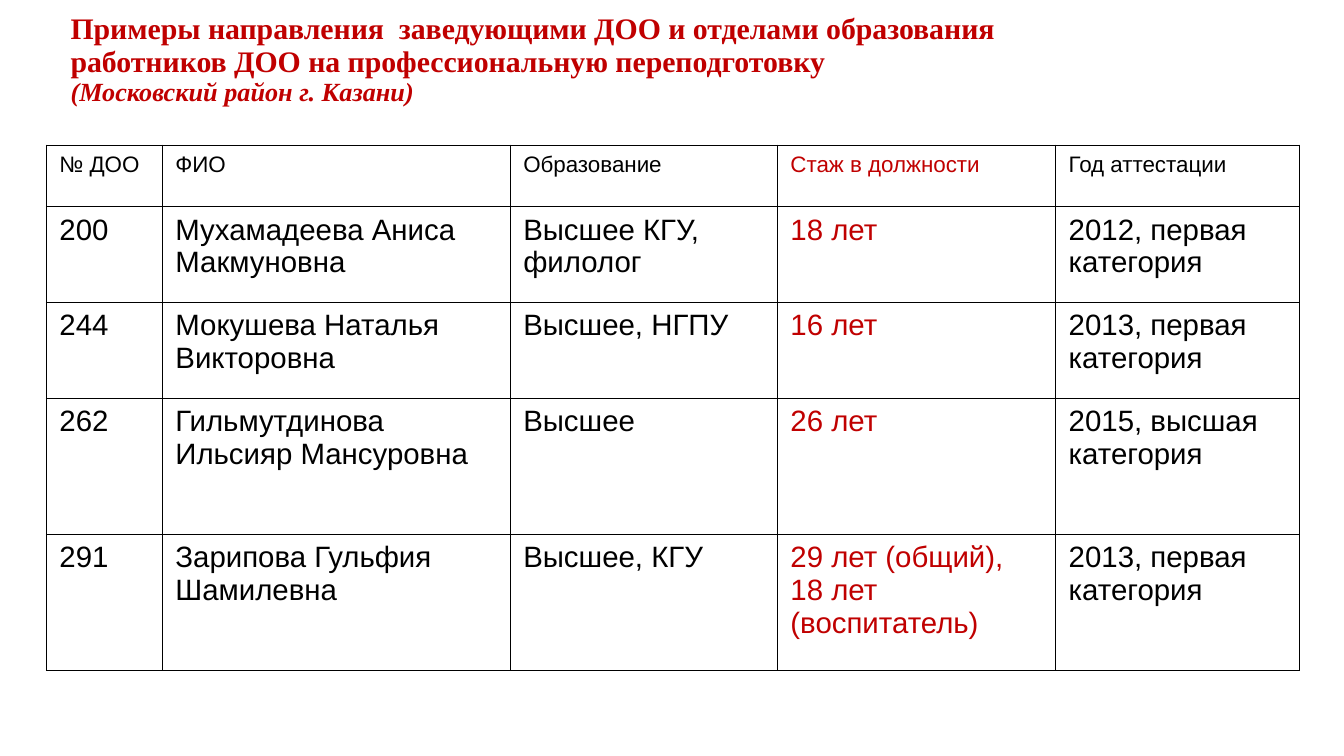
from lxml.etree import SubElement
from pptx import Presentation
from pptx.dml.color import RGBColor
from pptx.enum.text import MSO_ANCHOR, MSO_AUTO_SIZE, PP_ALIGN
from pptx.oxml.ns import qn
from pptx.util import Inches, Pt

RED = RGBColor(0xC0, 0x00, 0x00)
BLACK = RGBColor(0x00, 0x00, 0x00)

TITLE_BOX = (0.6, 0.37, 12.89, 0.46)
TABLE_BOX = (0.46, 1.44, 12.42, 5.22)
COLUMN_WIDTHS = (1.15, 3.45, 2.65, 2.76, 2.42)
ROW_HEIGHTS = (0.61, 0.95, 0.95, 1.35, 1.35)
EXPERIENCE_COLUMN = 3

TITLE_LINES = (
    ("Примеры направления  заведующими ДОО и отделами образования", 21.3, False),
    ("работников ДОО на профессиональную переподготовку", 21.3, False),
    ("(Московский район г. Казани)", 18.7, True),
)
STAFF = (
    ("№ ДОО", "ФИО", "Образование", "Стаж в должности", "Год аттестации"),
    ("200", "Мухамадеева Аниса Макмуновна", "Высшее КГУ, филолог",
     "18 лет", "2012, первая категория"),
    ("244", "Мокушева Наталья Викторовна", "Высшее, НГПУ",
     "16 лет", "2013, первая категория"),
    ("262", "Гильмутдинова Ильсияр Мансуровна", "Высшее",
     "26 лет", "2015, высшая категория"),
    ("291", "Зарипова Гульфия Шамилевна", "Высшее, КГУ",
     "29 лет (общий), 18 лет (воспитатель)", "2013, первая категория"),
)


def set_values(target, values):
    for name, value in values.items():
        setattr(target, name, value)


def add_span(para, text, color, **font_values):
    span = para.add_run()
    span.text = text
    set_values(span.font, font_values)
    span.font.color.rgb = color


def add_title(page, box):
    title = page.shapes.title
    left, top, width, height = map(Inches, box)
    set_values(title, dict(left=left, top=top, width=width, height=height))
    frame = title.text_frame
    set_values(frame, dict(
        word_wrap=True, auto_size=MSO_AUTO_SIZE.NONE,
        vertical_anchor=MSO_ANCHOR.MIDDLE,
        margin_left=Inches(0.1), margin_right=Inches(0.1),
        margin_top=Inches(0.05), margin_bottom=Inches(0.05)))
    para = frame.paragraphs[0]
    set_values(para, dict(alignment=PP_ALIGN.LEFT, line_spacing=0.9,
                          space_before=Pt(0)))
    for index, (text, size, italic) in enumerate(TITLE_LINES):
        if index:
            para.add_line_break()
        add_span(para, text, RED, name="Times New Roman", size=Pt(size),
                 bold=True, italic=italic)


def add_borders(cell):
    properties = cell._tc.get_or_add_tcPr()
    # Borders come before the fill in the cell properties
    for position, side in enumerate(("lnL", "lnR", "lnT", "lnB")):
        line = SubElement(properties, qn(f"a:{side}"), w=str(Pt(1)))
        fill = SubElement(line, qn("a:solidFill"))
        SubElement(fill, qn("a:srgbClr"), val=str(BLACK))
        properties.insert(position, line)


def add_staff_table(page, box):
    frame = page.shapes.add_table(len(STAFF), len(COLUMN_WIDTHS),
                                  *map(Inches, box))
    table = frame.table
    set_values(table, dict(first_row=False, horz_banding=False))
    for column, width in zip(table.columns, COLUMN_WIDTHS):
        column.width = Inches(width)
    for row, height in zip(table.rows, ROW_HEIGHTS):
        row.height = Inches(height)

    # Cells: small header, experience column in red
    for row_index, values in enumerate(STAFF):
        for column_index, text in enumerate(values):
            cell = table.cell(row_index, column_index)
            set_values(cell, dict(
                margin_left=Inches(0.13), margin_right=Inches(0.13),
                margin_top=Inches(0.07), margin_bottom=Inches(0.07),
                vertical_anchor=MSO_ANCHOR.TOP))
            cell.fill.background()
            add_borders(cell)
            color = RED if column_index == EXPERIENCE_COLUMN else BLACK
            add_span(cell.text_frame.paragraphs[0], text, color, name="Arial",
                     size=Pt(21 if row_index else 16), bold=False)


def main():
    deck = Presentation()
    set_values(deck, dict(slide_width=Inches(13.33), slide_height=Inches(7.5)))
    page = deck.slides.add_slide(deck.slide_layouts[5])
    add_title(page, TITLE_BOX)
    add_staff_table(page, TABLE_BOX)
    deck.save("out.pptx")


if __name__ == "__main__":
    main()
